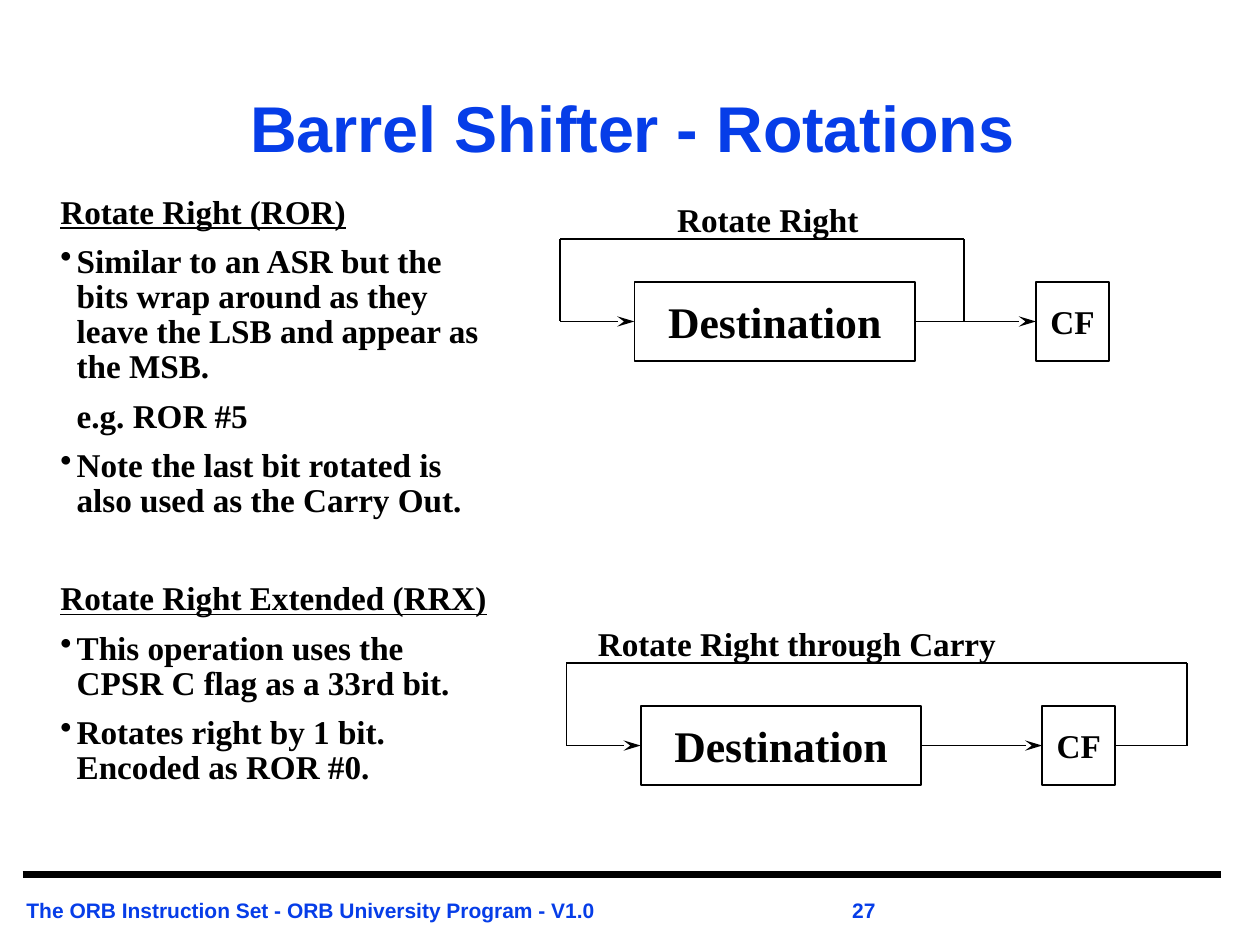
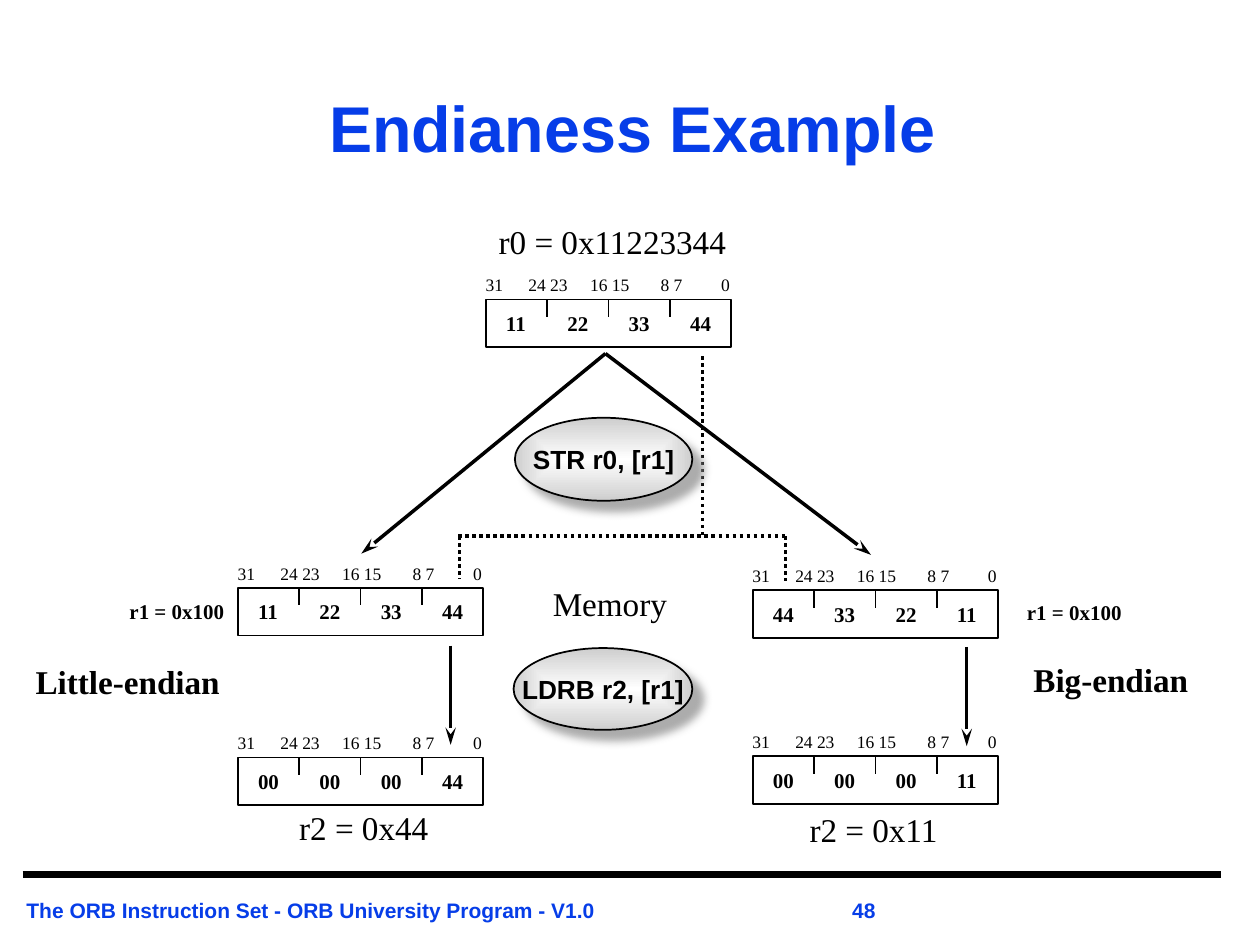
from lxml import etree
from pptx import Presentation
from pptx import util as u
from pptx.dml.color import RGBColor
from pptx.enum import dml, shapes, text
from pptx.oxml import parse_xml
from pptx.oxml.ns import nsdecls, qn

BLUE, BLACK = "063DE8", "000000"
SANS, SERIF = "Arial", "Times New Roman"
CENTER, LEFT = text.PP_ALIGN.CENTER, text.PP_ALIGN.LEFT
MIDDLE, TOP = text.MSO_ANCHOR.MIDDLE, text.MSO_ANCHOR.TOP
LABEL = {"size": 19, "bold": True}
PLAIN = {"size": 19}
BYTES = {"size": 12, "bold": True}
BITS = {"size": 10}
REGISTER_WIDTH, REGISTER_HEIGHT = 1.95, 0.38
BYTE_WIDTH = REGISTER_WIDTH / 4
BIT_TABS = (0.34, 0.83, 1.39, 1.87)
BYTE_TABS = [BYTE_WIDTH * k for k in (1, 2, 3)]


def color(target, value):
    target.rgb = RGBColor.from_string(value)


def style(paragraph, look, align=LEFT, spacing=None, ink=BLACK):
    paragraph.alignment = align
    if spacing:
        paragraph.line_spacing = spacing
    values = {"name": SERIF, **look, "size": u.Pt(look["size"])}
    for key, value in values.items():
        setattr(paragraph.font, key, value)
    color(paragraph.font.color, ink)


def add_tabs(paragraph, stops):
    tab_list = etree.SubElement(paragraph._p.get_or_add_pPr(), qn("a:tabLst"))
    for stop in stops:
        etree.SubElement(tab_list, qn("a:tab"), pos=str(u.Inches(stop)), algn="l")


def set_frame(frame, inset=(0.07, 0.03), anchor=TOP, wrap=True):
    side, edge = (u.Inches(value) for value in inset)
    values = {"margin_left": side, "margin_right": side, "margin_top": edge,
              "margin_bottom": edge, "vertical_anchor": anchor, "word_wrap": wrap}
    for key, value in values.items():
        setattr(frame, key, value)


def add_text(slide, area, words, look, align=LEFT, spacing=0.88, wrap=True,
             inset=(0.07, 0.03), tabs=(), ink=BLACK):
    frame = slide.shapes.add_textbox(*map(u.Inches, area)).text_frame
    set_frame(frame, inset, wrap=wrap)
    paragraph = frame.paragraphs[0]
    paragraph.text = words
    if tabs:
        add_tabs(paragraph, tabs)
    style(paragraph, look, align, spacing, ink)


def add_box(slide, area, words, look, kind=shapes.MSO_SHAPE.RECTANGLE,
            align=CENTER, inset=(0.1, 0.05), tabs=()):
    box = slide.shapes.add_shape(kind, *map(u.Inches, area))
    box.shadow.inherit = False
    box.fill.background()
    color(box.line.color, BLACK)
    box.line.width = u.Pt(1)
    set_frame(box.text_frame, inset, MIDDLE, wrap=False)
    paragraph = box.text_frame.paragraphs[0]
    paragraph.text = words
    if tabs:
        box.text_frame.word_wrap = True
        add_tabs(paragraph, tabs)
    style(paragraph, look, align)
    return box


def add_line(slide, start, end, weight=1, arrow=False, dash=None, begin=None, finish=None):
    line = slide.shapes.add_connector(shapes.MSO_CONNECTOR.STRAIGHT,
                                      *map(u.Inches, (*start, *end)))
    if begin:
        line.begin_connect(*begin)
    if finish:
        line.end_connect(*finish)
    color(line.line.color, BLACK)
    line.line.width = u.Pt(weight)
    if dash:
        line.line.dash_style = dash
    if arrow:
        etree.SubElement(line.line._get_or_add_ln(), qn("a:tailEnd"),
                         type="stealth", w="med", len="lg")
    etree.SubElement(line._element.spPr, qn("a:effectLst"))


def add_instruction(slide, area, words):
    oval = add_box(slide, area, words, {"size": 15, "bold": True, "name": SANS},
                   shapes.MSO_SHAPE.OVAL)
    properties = oval._element.spPr
    properties.find(qn("a:noFill")).getparent().replace(
        properties.find(qn("a:noFill")), parse_xml(
            f'<a:gradFill {nsdecls("a")} rotWithShape="1"><a:gsLst>'
            '<a:gs pos="0"><a:srgbClr val="FFFFFF"/></a:gs>'
            '<a:gs pos="100000"><a:srgbClr val="CECECE"/></a:gs></a:gsLst>'
            '<a:path path="shape"><a:fillToRect l="50000" t="50000" r="50000" b="50000"/>'
            '</a:path></a:gradFill>'))
    properties.find(qn("a:effectLst")).append(parse_xml(
        f'<a:outerShdw {nsdecls("a")} blurRad="{u.Pt(5)}" dist="{u.Pt(8.5)}" '
        'dir="2700000" algn="ctr" rotWithShape="0"><a:srgbClr val="919191">'
        '<a:alpha val="75000"/></a:srgbClr></a:outerShdw>'))


def new_slide(deck, heading, number):
    slide = deck.slides.add_slide(deck.slide_layouts[5])
    title = slide.shapes.title
    for key, value in zip(("left", "top", "width", "height"), (1.06, 0.4, 7.93, 1.29)):
        setattr(title, key, u.Inches(value))
    title.text_frame.text = heading
    set_frame(title.text_frame, (0.1, 0.05), MIDDLE)
    style(title.text_frame.paragraphs[0], {"size": 37, "bold": True, "name": SANS},
          CENTER, 0.9, BLUE)
    add_line(slide, (0.18, 6.95), (9.7, 6.95), 3.75)
    add_text(slide, (0.14, 7.07, 9.85, 0.29),
             f"The ORB Instruction Set - ORB University Program - V1.0\t{number}",
             {**BYTES, "name": SANS}, spacing=1.18, tabs=[6.56], ink=BLUE)
    return slide


def add_notes_column(slide, entries):
    frame = slide.shapes.add_textbox(*map(u.Inches, (0.41, 1.53, 3.6, 4.9))).text_frame
    set_frame(frame)
    for index, (kind, words) in enumerate(entries):
        paragraph = frame.paragraphs[0] if index == 0 else frame.add_paragraph()
        paragraph.text = words
        if index:
            paragraph.space_before = u.Pt(36 if kind == "heading" else 8.2)
        properties = paragraph._p.get_or_add_pPr()
        if kind != "heading":
            properties.set("marL", str(u.Inches(0.13)))
        if kind == "bullet":
            properties.set("indent", str(u.Inches(-0.13)))
            etree.SubElement(properties, qn("a:buChar"), char="•")
        style(paragraph, {**LABEL, "underline": kind == "heading"}, spacing=0.88)


def add_rotation(slide, left, top, name, name_left, through_carry):
    middle, loop_top, loop_left = top + 0.315, top - 0.34, left - 0.59
    destination = add_box(slide, (left, top, 2.23, 0.63), "Destination",
                          {"size": 25, "bold": True})
    carry = add_box(slide, (left + 3.19, top, 0.58, 0.63), "CF", LABEL)
    add_line(slide, (left + 2.23, middle), (left + 3.19, middle), arrow=True,
             begin=(destination, 3), finish=(carry, 1))
    loop_right = left + (4.34 if through_carry else 2.62)
    if through_carry:
        add_line(slide, (left + 3.77, middle), (loop_right, middle), begin=(carry, 3))
    corners = [(loop_right, middle), (loop_right, loop_top),
               (loop_left, loop_top), (loop_left, middle)]
    for start, end in zip(corners, corners[1:]):
        add_line(slide, start, end)
    add_line(slide, corners[-1], (left, middle), arrow=True, finish=(destination, 1))
    add_text(slide, (name_left, top - 0.69, 3.51, 0.38), name, LABEL, spacing=1.02)


def add_register(slide, left, top, values):
    add_box(slide, (left, top, REGISTER_WIDTH, REGISTER_HEIGHT), "\t".join(values.split()),
            BYTES, align=LEFT, inset=(0.16, 0.05), tabs=BYTE_TABS)
    for tab in BYTE_TABS:
        add_line(slide, (left + tab, top), (left + tab, top + 0.14))
    add_text(slide, (left - 0.1, top - 0.23, 2.2, 0.25), "31\t24 23\t16 15\t8 7\t0",
             BITS, spacing=0.9, inset=(0.1, 0.05), tabs=BIT_TABS)


def build_rotations(deck):
    slide = new_slide(deck, "Barrel Shifter - Rotations", 27)
    add_notes_column(slide, [
        ("heading", "Rotate Right (ROR)"),
        ("bullet", "Similar to an ASR but the bits wrap around as they leave the LSB "
                   "and appear as the MSB."),
        ("example", "e.g. ROR #5"),
        ("bullet", "Note the last bit rotated is also used as the Carry Out."),
        ("heading", "Rotate Right Extended (RRX)"),
        ("bullet", "This operation uses the CPSR C flag as a 33rd bit."),
        ("bullet", "Rotates right by 1 bit. Encoded as ROR #0."),
    ])
    add_rotation(slide, 5.04, 2.24, "Rotate Right", 5.31, False)
    add_rotation(slide, 5.09, 5.61, "Rotate Right through Carry", 4.68, True)


def build_endianness(deck):
    slide = new_slide(deck, "Endianess Example", 48)
    for left, top, values in [(3.86, 2.38, "11 22 33 44"),
                              (1.89, 4.67, "11 22 33 44"), (5.98, 4.69, "44 33 22 11"),
                              (1.89, 6.02, "00 00 00 44"), (5.98, 6.01, "00 00 00 11")]:
        add_register(slide, left, top, values)

    for area, words, look in [
            ((3.85, 1.77, 2.03, 0.34), "r0 = 0x11223344", PLAIN),
            ((4.32, 4.65, 1.05, 0.34), "Memory", PLAIN),
            ((2.27, 6.43, 1.24, 0.34), "r2 = 0x44", PLAIN),
            ((6.32, 6.44, 1.24, 0.34), "r2 = 0x11", PLAIN),
            ((0.2, 5.27, 1.63, 0.34), "Little-endian", LABEL),
            ((8.06, 5.25, 1.53, 0.34), "Big-endian", LABEL),
            ((0.9, 4.75, 1.01, 0.24), "r1 = 0x100", BYTES),
            ((8.03, 4.76, 1.01, 0.24), "r1 = 0x100", BYTES)]:
        add_text(slide, area, words, look, CENTER, wrap=False)

    for start, end in [((5.58, 2.83), (5.58, 4.26)), ((3.64, 4.26), (6.24, 4.26)),
                       ((3.65, 4.26), (3.65, 4.6)), ((6.24, 4.26), (6.24, 4.62))]:
        add_line(slide, start, end, 2, dash=dml.MSO_LINE.ROUND_DOT)

    add_instruction(slide, (4.09, 3.32, 1.41, 0.66), "STR r0, [r1]")
    add_instruction(slide, (4.08, 5.15, 1.42, 0.65), "LDRB r2, [r1]")

    for start, end in [((4.81, 2.81), (2.87, 4.4)), ((4.81, 2.81), (6.92, 4.41)),
                       ((3.58, 5.13), (3.58, 5.92)), ((7.68, 5.14), (7.68, 5.93))]:
        add_line(slide, start, end, 2, arrow=True)


def main():
    deck = Presentation()
    deck.slide_width, deck.slide_height = u.Inches(10.01), u.Inches(7.51)
    build_rotations(deck)
    build_endianness(deck)
    deck.save("out.pptx")


if __name__ == "__main__":
    main()
